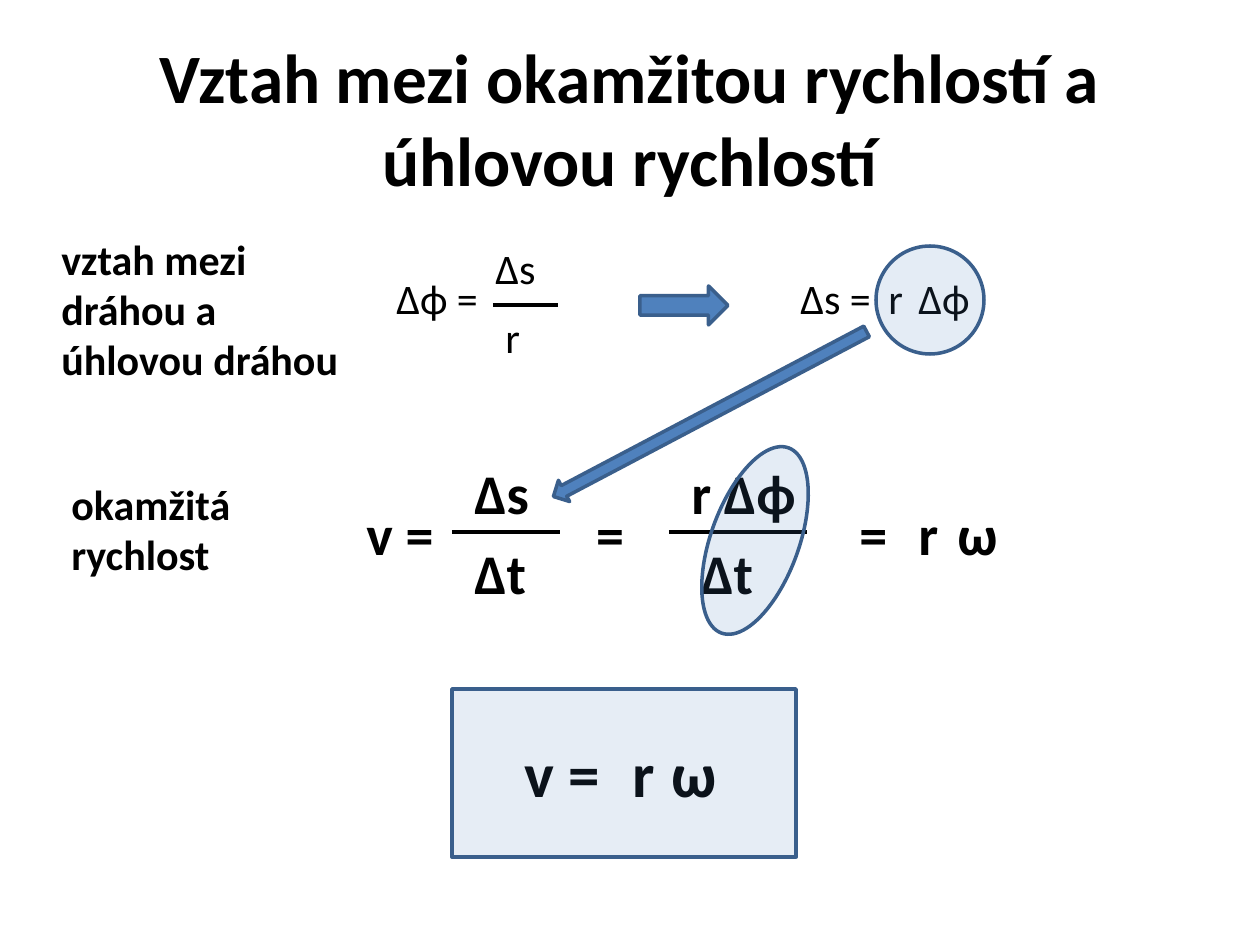
from lxml.etree import SubElement
from pptx import Presentation
from pptx.dml.color import RGBColor
from pptx.enum.shapes import MSO_CONNECTOR, MSO_SHAPE
from pptx.enum.text import MSO_ANCHOR, PP_ALIGN
from pptx.oxml.ns import qn
from pptx.util import Pt

SCALE = 914400 / 126
COLORS = {"ink": "000000", "blue": "4F81BD", "edge": "3A5F8C"}
FONT = "Calibri"


def px(n):
    return round(n * SCALE)


def rgb(name):
    return RGBColor.from_string(COLORS[name])


def text(slide, words, x, y, w, h, size=24, bold=False,
         align=PP_ALIGN.LEFT, anchor=MSO_ANCHOR.TOP):
    frame = slide.shapes.add_textbox(px(x), px(y), px(w), px(h)).text_frame
    frame.word_wrap = True
    frame.vertical_anchor = anchor
    para = frame.paragraphs[0]
    para.alignment = align
    run = para.add_run()
    run.text = words
    font = run.font
    font.name, font.size, font.bold = FONT, Pt(size), bold
    font.color.rgb = rgb("ink")


def shape(slide, kind, x, y, w, h, turn=0, alpha=None):
    """Draw a blue shape; alpha is its opacity in percent."""
    item = slide.shapes.add_shape(kind, px(x), px(y), px(w), px(h))
    item.shadow.inherit = False
    item.rotation = turn
    item.fill.solid()
    item.fill.fore_color.rgb = rgb("blue")
    item.line.color.rgb = rgb("edge")
    item.line.width = Pt(2)
    if alpha is not None:
        color = item._element.spPr.find(qn("a:solidFill"))[0]
        SubElement(color, qn("a:alpha")).set("val", str(alpha * 1000))


def bar(slide, x, y, w):
    line = slide.shapes.add_connector(
        MSO_CONNECTOR.STRAIGHT, px(x), px(y), px(x + w), px(y))
    line.line.color.rgb = rgb("ink")
    line.line.width = Pt(2)
    SubElement(line._element.spPr, qn("a:effectLst"))


def ratio(slide, x, y, w, upper, lower, rise, **style):
    """Draw a fraction bar at (x, y); upper and lower are (words, dx, width)."""
    for (words, dx, wide), top in ((upper, y - rise), (lower, y)):
        text(slide, words, x + dx, top, wide, 88, **style)
    bar(slide, x, y, w)


def terms(slide, y, parts, **style):
    """Set (words, x, width) parts on one line."""
    for words, x, w in parts:
        text(slide, words, x, y, w, 88, **style)


def title(slide, x, y, w, h):
    text(slide, "Vztah mezi okamžitou rychlostí a úhlovou rychlostí",
         x, y, w, h, size=39.6, bold=True,
         align=PP_ALIGN.CENTER, anchor=MSO_ANCHOR.MIDDLE)


def track(slide, x, y):
    text(slide, "vztah mezi dráhou a úhlovou dráhou",
         x, y, 325, 165, bold=True)
    terms(slide, y + 39, [("Δϕ =", x + 335, 147), ("Δϕ", x + 857, 147),
                          ("Δs =", x + 739, 108), ("r", x + 827, 79)])
    ratio(slide, x + 444, y + 78, 65, ("Δs", -10, 108), ("r", 0, 79), 69)
    shape(slide, MSO_SHAPE.RIGHT_ARROW, x + 591, y + 59, 88, 39)
    shape(slide, MSO_SHAPE.OVAL, x + 827, y + 19, 108, 108, alpha=15)


def speed(slide, x, y):
    style = dict(size=32, bold=True)
    text(slide, "okamžitá rychlost", x, y, 217, 115, bold=True)
    terms(slide, y + 21, [("v =", x + 295, 108), (" =", x + 512, 69),
                          ("=", x + 788, 59), ("r", x + 847, 108),
                          ("ω", x + 886, 108)], **style)
    mid = y + 60
    ratio(slide, x + 393, mid, 108, ("Δs", 10, 108), ("Δt", 10, 108), 80, **style)
    ratio(slide, x + 610, mid, 138, ("r Δϕ", 10, 147), ("Δt", 20, 108), 80, **style)
    shape(slide, MSO_SHAPE.OVAL, x + 652, y - 30, 88, 197, turn=19.9, alpha=15)


def result(slide, x, y, w, h):
    terms(slide, y + 39, [("v =", x + 60, 108), ("r", x + 168, 108),
                          ("ω", x + 207, 108)], size=36, bold=True)
    shape(slide, MSO_SHAPE.RECTANGLE, x, y, w, h, alpha=14)


def main():
    deck = Presentation()
    deck.slide_width, deck.slide_height = px(1260), px(945)
    slide = deck.slides.add_slide(deck.slide_layouts[6])
    title(slide, 63, 38, 1134, 158)
    track(slide, 49, 227)
    speed(slide, 59, 472)
    result(slide, 452, 689, 344, 168)
    shape(slide, MSO_SHAPE.LEFT_ARROW, 533, 402, 354, 24, turn=332.2)
    deck.save("out.pptx")


if __name__ == "__main__":
    main()
